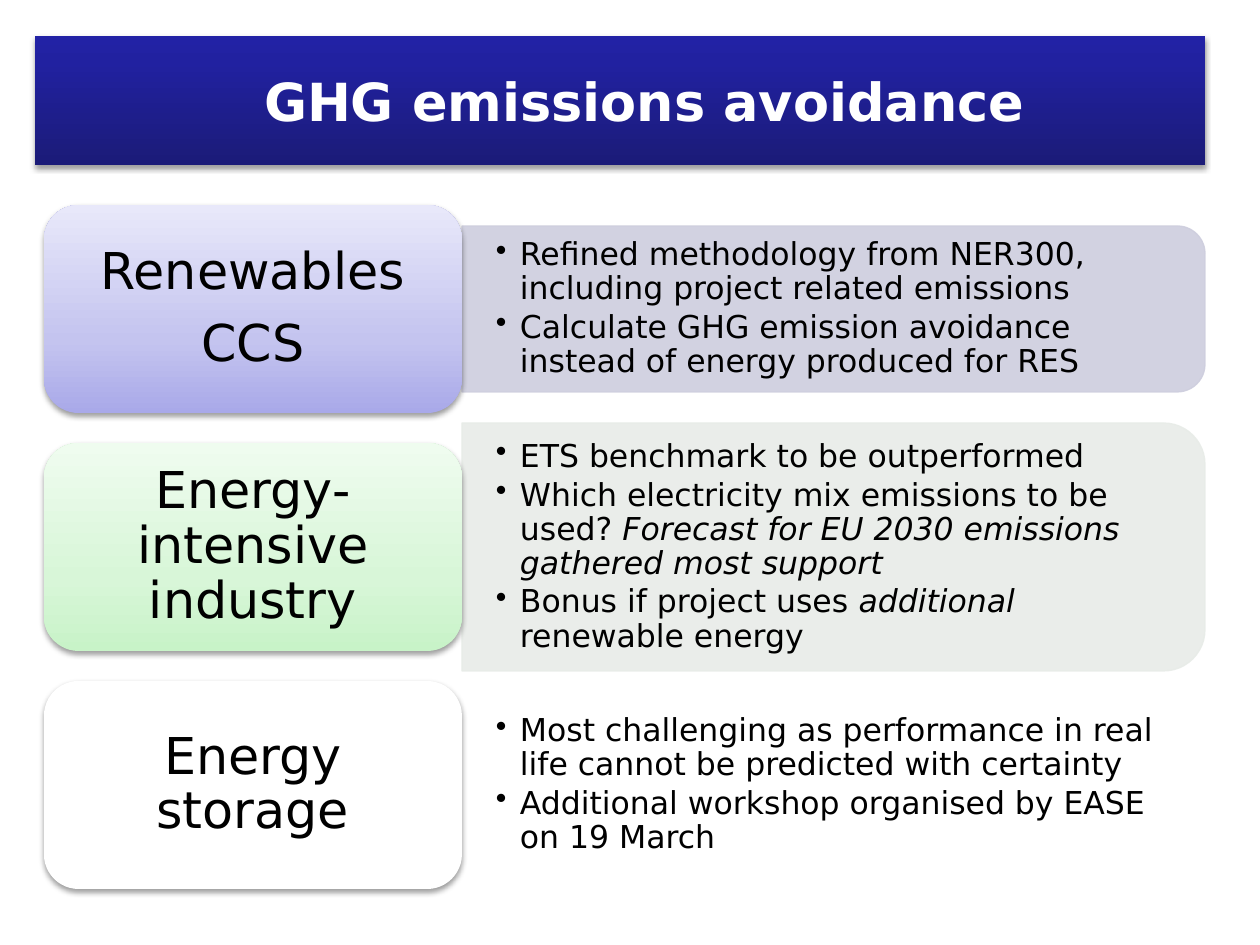
from pptx import Presentation
from pptx import util as u
from pptx.dml.color import RGBColor
from pptx.enum import shapes, text
from pptx.oxml import parse_xml
from pptx.oxml.ns import nsdecls, qn

PX = 914400 / 126
FONT = "DejaVu Sans"
BLACK = RGBColor(0x00, 0x00, 0x00)
WHITE = RGBColor(0xFF, 0xFF, 0xFF)
LAVENDER = RGBColor(0xCE, 0xCE, 0xDE)
SAGE = RGBColor(0xE8, 0xEC, 0xE8)
NAVY_STOPS = [(0, RGBColor(0x1B, 0x1B, 0x78)), (80, RGBColor(0x21, 0x21, 0xA0)),
              (100, RGBColor(0x22, 0x22, 0xA5))]
VIOLET_STOPS = [(0, RGBColor(0xA9, 0xA9, 0xE9)), (35, RGBColor(0xC4, 0xC4, 0xEF)),
                (100, RGBColor(0xE8, 0xE8, 0xFA))]
GREEN_STOPS = [(0, RGBColor(0xC8, 0xF3, 0xC8)), (35, RGBColor(0xD8, 0xF6, 0xD8)),
               (100, RGBColor(0xEF, 0xFC, 0xEF))]
WHITE_STOPS = [(0, WHITE), (100, WHITE)]

LABEL_X, LABEL_Y, LABEL_W, LABEL_H, PITCH = 44, 205, 418, 208, 238
PANEL_X, PANEL_W = 462, 743
LABEL_FORMAT = {"alignment": text.PP_ALIGN.CENTER, "line_spacing": 0.9,
                "space_after": u.Pt(10.15)}
BULLET_FORMAT = {"level": 1, "line_spacing": 0.9, "space_after": u.Pt(2.7)}

ROWS = [
    (["Renewables", "CCS"], VIOLET_STOPS, LAVENDER, 166, [
        [("Refined methodology from NER300, including project related emissions", False)],
        [("Calculate GHG emission avoidance instead of energy produced for RES", False)],
    ]),
    (["Energy-intensive industry"], GREEN_STOPS, SAGE, 248, [
        [("ETS benchmark to be outperformed", False)],
        [("Which electricity mix emissions to be used? ", False),
         ("Forecast for EU 2030 emissions gathered most support", True)],
        [("Bonus if project uses ", False), ("additional ", True),
         ("renewable energy", False)],
    ]),
    (["Energy storage"], WHITE_STOPS, WHITE, 166, [
        [("Most challenging as performance in real life cannot be predicted with certainty",
          False)],
        [("Additional workshop organised by EASE on 19 March", False)],
    ]),
]


def px(n):
    return u.Emu(round(n * PX))


def set_attrs(obj, values):
    for name, value in values.items():
        setattr(obj, name, value)


def box(x, y, w, h):
    return [px(n) for n in (x, y, w, h)]


def add_run(p, words, size, **extra):
    r = p.add_run()
    r.text = words
    set_attrs(r.font, {"name": FONT, "size": u.Pt(size), **extra})
    return r


def shade(sp, stops):
    sp.fill.gradient()
    sp.fill.gradient_angle = 90
    gs_list = next(sp._element.spPr.iter(qn("a:gsLst")))
    for gs in list(gs_list):
        gs_list.remove(gs)
    for pos, color in stops:
        gs_list.append(parse_xml(
            f'<a:gs {nsdecls("a")} pos="{pos * 1000}"><a:srgbClr val="{color}"/></a:gs>'))


def cast_shadow(sp):
    sp.shadow.inherit = False
    sp._element.spPr.find(qn("a:effectLst")).append(parse_xml(
        f'<a:outerShdw {nsdecls("a")} blurRad="40000" dist="20000" dir="5400000" '
        'rotWithShape="0"><a:srgbClr val="000000"><a:alpha val="38000"/></a:srgbClr>'
        '</a:outerShdw>'))


def add_title(s, words):
    sp = s.shapes.title
    sp.left, sp.top, sp.width, sp.height = box(35, 36, 1170, 129)
    shade(sp, NAVY_STOPS)
    cast_shadow(sp)
    set_attrs(sp.text_frame, {"vertical_anchor": text.MSO_ANCHOR.MIDDLE, "word_wrap": True})
    p = sp.text_frame.paragraphs[0]
    p.alignment = text.PP_ALIGN.CENTER
    p._p.get_or_add_pPr().set("marL", str(px(49)))
    p._p.get_or_add_pPr().set("indent", "0")
    add_run(p, words, 30, bold=True).font.color.rgb = WHITE


def add_text(s, place, inset_x, inset_y, paragraphs, size, fmt, bulleted=False):
    tf = s.shapes.add_textbox(*place).text_frame
    set_attrs(tf, {"word_wrap": True, "vertical_anchor": text.MSO_ANCHOR.MIDDLE,
                   "margin_left": px(inset_x), "margin_right": px(inset_x),
                   "margin_top": px(inset_y), "margin_bottom": px(inset_y)})
    for i, runs in enumerate(paragraphs):
        p = tf.add_paragraph() if i else tf.paragraphs[0]
        set_attrs(p, fmt)
        if bulleted:
            pPr = p._p.get_or_add_pPr()
            pPr.set("marL", str(px(24)))
            pPr.set("indent", str(-px(24)))
            pPr.append(parse_xml(f'<a:buChar {nsdecls("a")} char="•"/>'))
        for words, italic in runs:
            add_run(p, words, size, italic=italic).font.color.rgb = BLACK


def add_panel(s, middle, height, color, bullets):
    center = PANEL_X + PANEL_W / 2
    sp = s.shapes.add_shape(
        shapes.MSO_SHAPE.ROUND_2_SAME_RECTANGLE,
        *box(center - height / 2, middle - PANEL_W / 2, height, PANEL_W))
    sp.rotation = 90
    sp.shadow.inherit = False
    sp.line.width = u.Pt(0.75)
    for fill in (sp.fill, sp.line.fill):
        fill.solid()
        fill.fore_color.rgb = color
    for clr in sp._element.spPr.iter(qn("a:srgbClr")):
        clr.append(parse_xml(f'<a:alpha {nsdecls("a")} val="90000"/>'))
    text_h = height * 0.9
    add_text(s, box(PANEL_X, middle - text_h / 2, PANEL_W - 9, text_h), 34, 17,
             bullets, 18, BULLET_FORMAT, bulleted=True)


def add_label(s, top, stops, lines):
    sp = s.shapes.add_shape(shapes.MSO_SHAPE.ROUNDED_RECTANGLE,
                            *box(LABEL_X, top, LABEL_W, LABEL_H))
    shade(sp, stops)
    sp.line.fill.background()
    cast_shadow(sp)
    add_text(s, box(LABEL_X + 10, top + 10, LABEL_W - 20, LABEL_H - 20), 15, 8,
             [[(line, False)] for line in lines], 29, LABEL_FORMAT)


def main():
    prs = Presentation()
    prs.slide_width, prs.slide_height = u.Inches(10), u.Inches(7.5)
    s = prs.slides.add_slide(prs.slide_layouts[5])
    add_title(s, "GHG emissions avoidance")
    for i, (lines, stops, color, height, bullets) in enumerate(ROWS):
        top = LABEL_Y + i * PITCH
        add_panel(s, top + LABEL_H / 2, height, color, bullets)
        add_label(s, top, stops, lines)
    prs.save("out.pptx")


if __name__ == "__main__":
    main()
